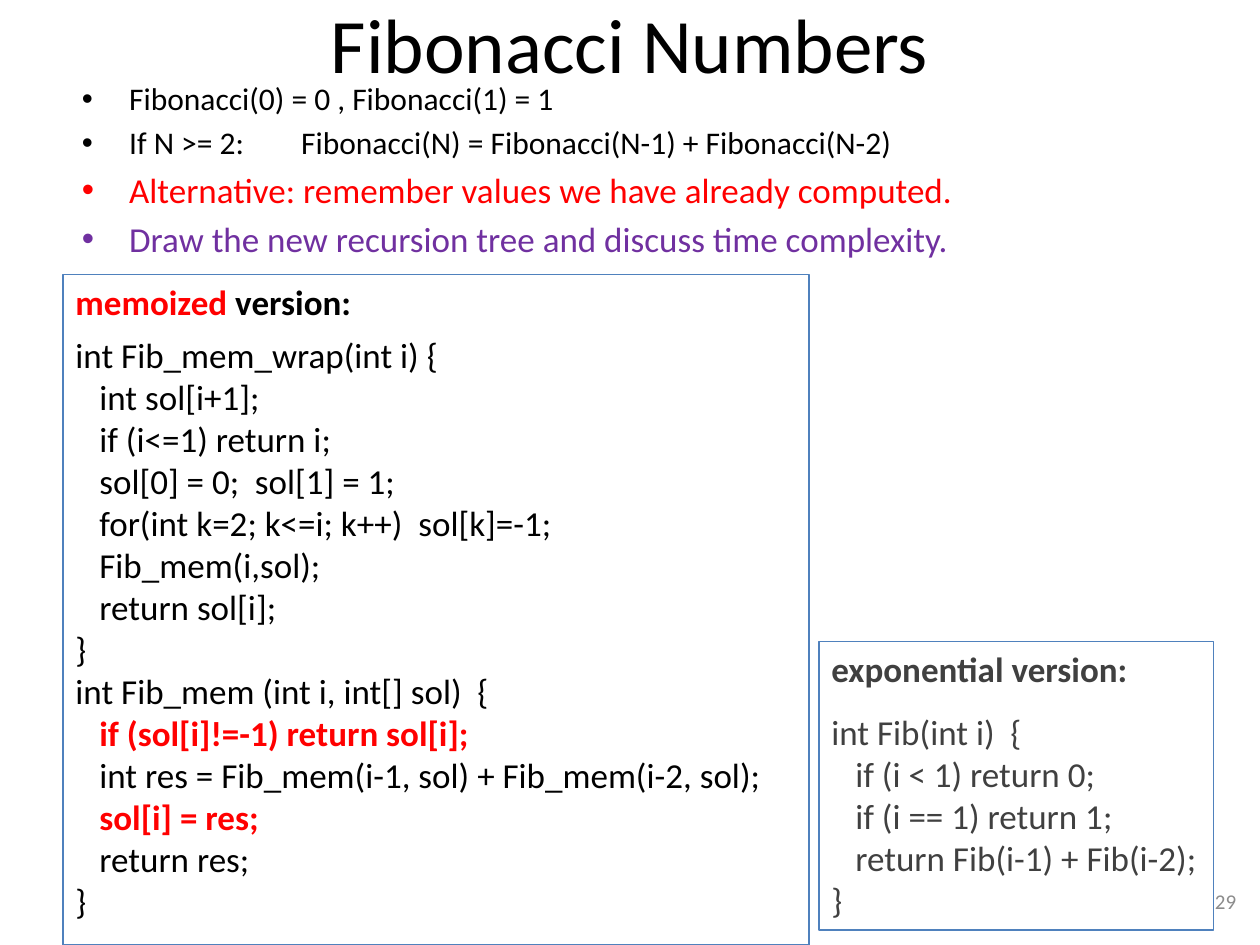
from pptx import Presentation
from pptx.util import Inches, Pt
from pptx.dml.color import RGBColor as RGB
from pptx.enum.shapes import MSO_SHAPE as SHAPE
from pptx.enum.text import PP_ALIGN as ALIGN, MSO_ANCHOR as ANCHOR, MSO_AUTO_SIZE as AUTO
from lxml.etree import SubElement as Sub
from pptx.oxml.ns import qn

BLACK = RGB(0x00, 0x00, 0x00)
RED = RGB(0xFF, 0x00, 0x00)
PURPLE = RGB(0x70, 0x30, 0xA0)
DARK = RGB(0x40, 0x40, 0x40)
GRAY = RGB(0x8C, 0x8C, 0x8C)
BLUE = RGB(0x4F, 0x81, 0xBD)

CELL = Inches(0.25)
COLS, ROWS = 40, 30
STEP = Inches(0.19)

FACTS = [
    ("Fibonacci(0) = 0 , Fibonacci(1) = 1", 18, BLACK),
    ("If N >= 2:\tFibonacci(N) = Fibonacci(N-1) + Fibonacci(N-2)", 18, BLACK),
    ("Alternative: remember values we have already computed.", 20, RED),
    ("Draw the new recursion tree and discuss time complexity.", 20, PURPLE),
]

MEMO = [
    (0, "int Fib_mem_wrap(int i) {"),
    (1, "int sol[i+1];"),
    (1, "if (i<=1) return i;"),
    (1, "sol[0] = 0;  sol[1] = 1;"),
    (1, "for(int k=2; k<=i; k++)  sol[k]=-1;"),
    (1, "Fib_mem(i,sol);"),
    (1, "return sol[i];"),
    (0, "}"),
    (0, "int Fib_mem (int i, int[] sol)  {"),
    (1, "if (sol[i]!=-1) return sol[i];"),
    (1, "int res = Fib_mem(i-1, sol) + Fib_mem(i-2, sol);"),
    (1, "sol[i] = res;"),
    (1, "return res;"),
    (0, "}"),
]
KEY = {"if (sol[i]!=-1) return sol[i];", "sol[i] = res;"}

PLAIN = [
    (0, "int Fib(int i)  {"),
    (1, "if (i < 1) return 0;"),
    (1, "if (i == 1) return 1;"),
    (1, "return Fib(i-1) + Fib(i-2);"),
    (0, "}"),
]


def grid(box):
    return [int(n * CELL) for n in box]


def place(shape, box):
    names = ("left", "top", "width", "height")
    for name, val in zip(names, grid(box)):
        setattr(shape, name, val)


def write(para, text, size, color, bold=False):
    run = para.add_run()
    run.text = text
    look = {"name": "Calibri", "size": Pt(size), "bold": bold}
    for name, val in look.items():
        setattr(run.font, name, val)
    run.font.color.rgb = color


def line(frame, first):
    return frame.paragraphs[0] if first else frame.add_paragraph()


def add_tab(para, pos):
    props = para._p.get_or_add_pPr()
    tabs = Sub(props, qn("a:tabLst"))
    Sub(tabs, qn("a:tab"), pos=str(pos), algn="l")


def add_title(slide, box):
    title = slide.shapes.title
    place(title, box)
    frame = title.text_frame
    frame.auto_size = AUTO.NONE
    frame.vertical_anchor = ANCHOR.MIDDLE
    para = frame.paragraphs[0]
    para.alignment = ALIGN.CENTER
    write(para, "Fibonacci Numbers", 44, BLACK)


def add_facts(slide, box):
    body = slide.placeholders[1]
    place(body, box)
    frame = body.text_frame
    frame.auto_size = AUTO.NONE
    for i, (text, size, color) in enumerate(FACTS):
        para = line(frame, i == 0)
        write(para, text, size, color)
        if "\t" in text:
            add_tab(para, Inches(1.74))


def add_code(slide, box, head, gap, rows, color):
    rect = slide.shapes.add_shape(SHAPE.RECTANGLE, *grid(box))
    rect.shadow.inherit = False
    rect.fill.background()
    rect.line.color.rgb = BLUE
    rect.line.width = Pt(0.75)
    frame = rect.text_frame
    look = {"word_wrap": True, "vertical_anchor": ANCHOR.TOP,
            "margin_right": Inches(0.05)}
    for name, val in look.items():
        setattr(frame, name, val)
    para = frame.paragraphs[0]
    para.alignment = ALIGN.LEFT
    para.space_after = Pt(gap)
    for text, tint in head:
        write(para, text, 20, tint, True)
    for level, text in rows:
        para = frame.add_paragraph()
        para.alignment = ALIGN.LEFT
        props = para._p.get_or_add_pPr()
        props.set("marL", str(level * STEP))
        key = text in KEY
        write(para, text, 20, RED if key else color, key)


def add_number(slide, box):
    frame = slide.shapes.add_textbox(*grid(box)).text_frame
    frame.word_wrap = True
    frame.vertical_anchor = ANCHOR.MIDDLE
    para = frame.paragraphs[0]
    para.alignment = ALIGN.RIGHT
    write(para, "29", 12, GRAY)


def main():
    deck = Presentation()
    deck.slide_width, deck.slide_height = COLS * CELL, ROWS * CELL
    slide = deck.slides.add_slide(deck.slide_layouts[1])
    add_title(slide, (2, 0, 36, 2.68))
    add_facts(slide, (2.2, 2.32, 36, 6.4))
    add_number(slide, (30.32, 27.8, 9.32, 1.6))
    add_code(slide, (26, 20.36, 12.52, 9.16),
             [("exponential version:", DARK)], 12, PLAIN, DARK)
    add_code(slide, (2, 8.72, 23.68, 21.28),
             [("memoized", RED), (" version:", BLACK)], 6, MEMO, BLACK)
    deck.save("out.pptx")


if __name__ == "__main__":
    main()
